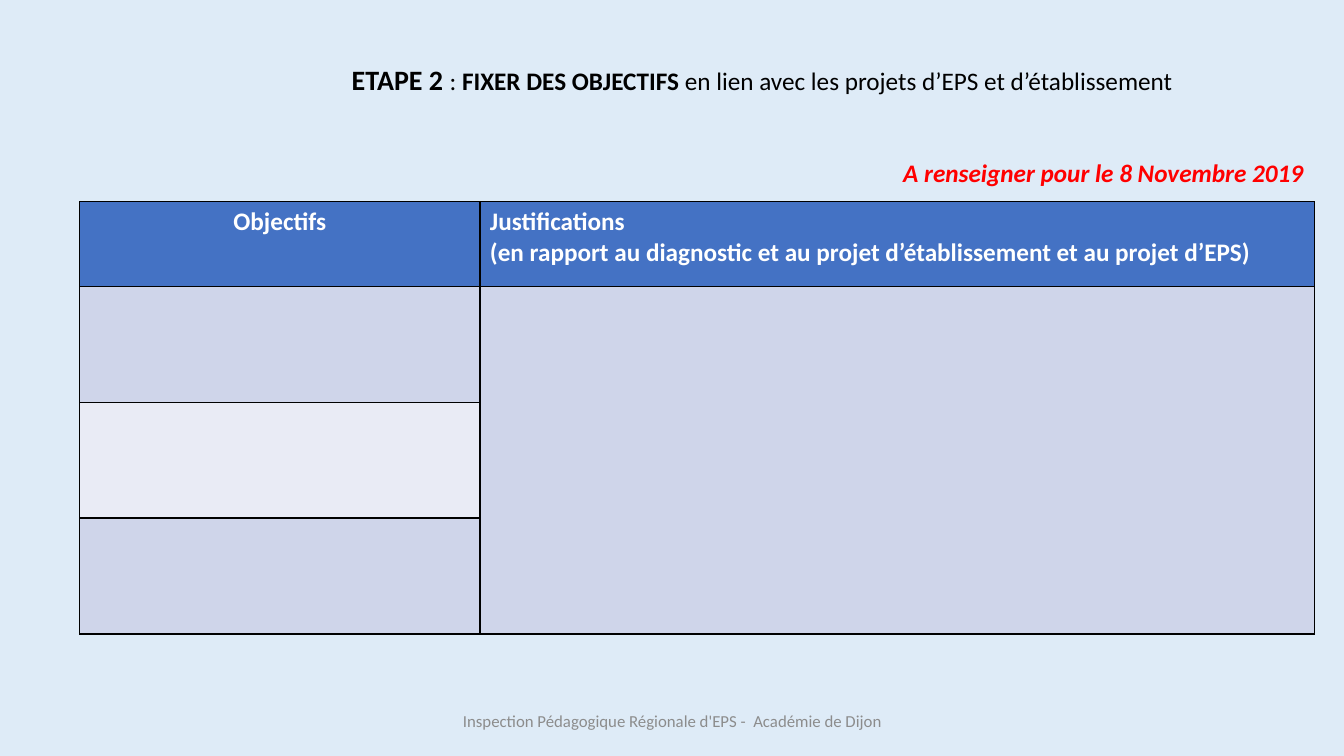
from pptx import Presentation
from pptx.dml.color import RGBColor
from pptx.enum.text import MSO_ANCHOR, PP_ALIGN
from pptx.util import Inches, Pt
from lxml.etree import SubElement
from pptx.oxml.ns import qn

FONT = "Calibri"
COLORS = {
    "background": "DEEBF7", "black": "000000", "white": "FFFFFF",
    "header": "4472C4", "band": "CFD5EA", "light": "E9EBF5",
    "footer": "8C8C8C", "deadline": "FF0000",
}
TITLE = [
    ("ETAPE 2 ", 20, True),
    (": ", 18, False),
    ("FIXER DES OBJECTIFS ", 18, True),
    ("en lien avec les projets d’EPS et d’établissement", 18, False),
]
DEADLINE = [("A renseigner pour le 8 Novembre 2019", 18, True)]
FOOTER = [("Inspection Pédagogique Régionale d'EPS -  Académie de Dijon", 12, False)]
HEADERS = [
    (["Objectifs"], PP_ALIGN.CENTER),
    (["Justifications",
      "(en rapport au diagnostic et au projet d’établissement et au projet d’EPS)"],
     PP_ALIGN.LEFT),
]
COLUMN_WIDTHS = [3.97, 8.28]
ROW_HEIGHTS = [0.84, 1.15, 1.15, 1.15]
TABLE_LEFT, TABLE_TOP = 0.79, 2


def rgb(name):
    return RGBColor.from_string(COLORS[name])


def style(p, color, align):
    p.font.name = FONT
    p.font.color.rgb = rgb(color)
    p.alignment = align


def add_text(s, box, runs, color, align=PP_ALIGN.LEFT, wrap=False,
             anchor=MSO_ANCHOR.TOP, italic=False):
    tf = s.shapes.add_textbox(*map(Inches, box)).text_frame
    tf.word_wrap = wrap
    tf.vertical_anchor = anchor
    p = tf.paragraphs[0]
    style(p, color, align)
    p.font.italic = italic
    for text, size, bold in runs:
        r = p.add_run()
        r.text = text
        r.font.size = Pt(size)
        r.font.bold = bold


def format_cell(cell, color):
    tcPr = cell._tc.get_or_add_tcPr()
    for side in ("a:lnL", "a:lnR", "a:lnT", "a:lnB"):
        ln = SubElement(tcPr, qn(side), w=str(Pt(1)))
        fill = SubElement(ln, qn("a:solidFill"))
        SubElement(fill, qn("a:srgbClr"), val=COLORS["black"])
    cell.fill.solid()
    cell.fill.fore_color.rgb = rgb(color)


def add_objectives_table(s):
    table = s.shapes.add_table(
        len(ROW_HEIGHTS), len(COLUMN_WIDTHS), Inches(TABLE_LEFT), Inches(TABLE_TOP),
        Inches(sum(COLUMN_WIDTHS)), Inches(sum(ROW_HEIGHTS))).table
    for column, width in zip(table.columns, COLUMN_WIDTHS):
        column.width = Inches(width)
    for row, height in zip(table.rows, ROW_HEIGHTS):
        row.height = Inches(height)

    for i in range(len(ROW_HEIGHTS)):
        for j in range(len(COLUMN_WIDTHS)):
            color = "header" if i == 0 else "light" if (i, j) == (2, 0) else "band"
            format_cell(table.cell(i, j), color)
    table.cell(1, 1).merge(table.cell(len(ROW_HEIGHTS) - 1, 1))

    for j, (lines, align) in enumerate(HEADERS):
        tf = table.cell(0, j).text_frame
        tf.text = "\n".join(lines)
        for p in tf.paragraphs:
            style(p, "white", align)
            p.font.size = Pt(18)
            p.font.bold = True


def main():
    prs = Presentation()
    prs.slide_width, prs.slide_height = Inches(13.33), Inches(7.5)
    s = prs.slides.add_slide(prs.slide_layouts[6])
    s.background.fill.solid()
    s.background.fill.fore_color.rgb = rgb("background")

    add_text(s, (3.39, 0.57, 8.37, 0.44), TITLE, "black")
    add_objectives_table(s)
    add_text(s, (4.42, 6.95, 4.5, 0.4), FOOTER, "footer", PP_ALIGN.CENTER,
             wrap=True, anchor=MSO_ANCHOR.MIDDLE)
    add_text(s, (8.86, 1.51, 4.18, 0.4), DEADLINE, "deadline", italic=True)
    prs.save("out.pptx")


if __name__ == "__main__":
    main()
